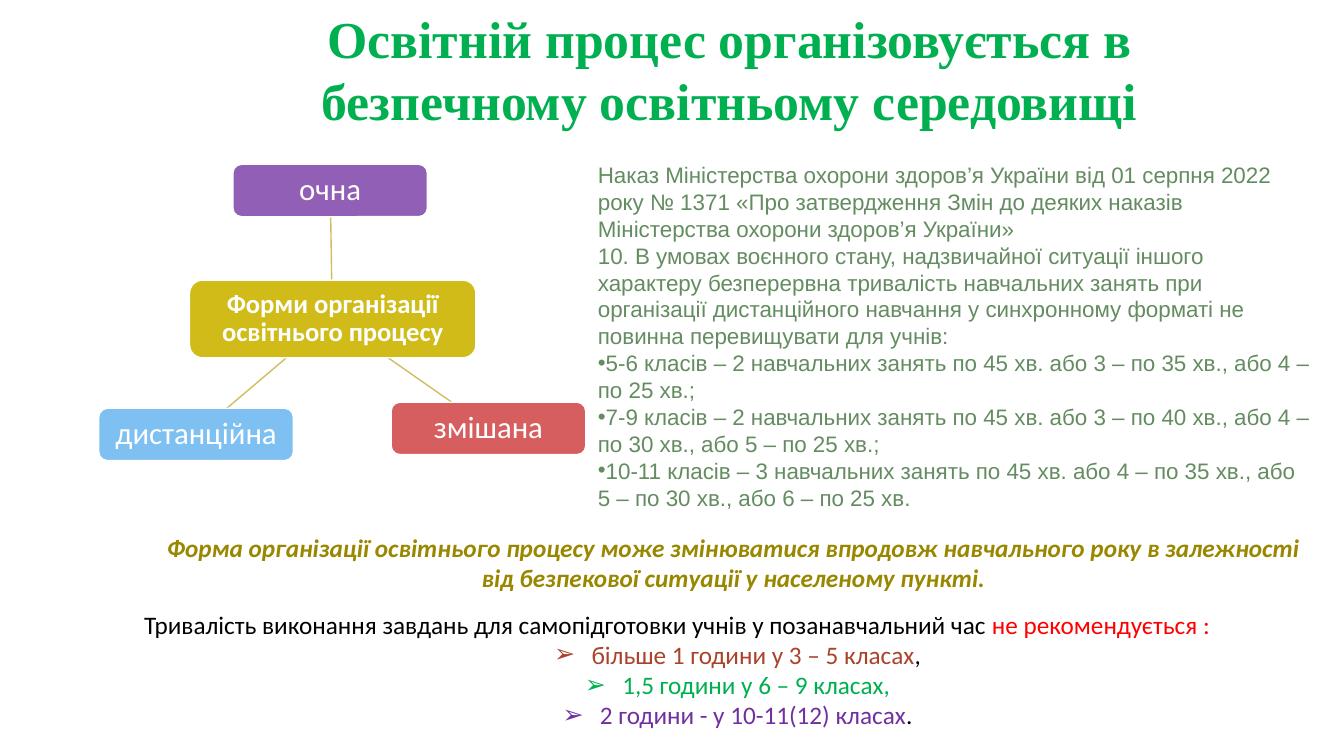
from dataclasses import dataclass

from lxml import etree
from pptx import Presentation
from pptx.dml.color import RGBColor
from pptx.enum.shapes import MSO_CONNECTOR, MSO_SHAPE
from pptx.enum.text import MSO_ANCHOR, MSO_AUTO_SIZE, PP_ALIGN
from pptx.oxml.ns import qn
from pptx.util import Inches, Pt

ROUNDED = MSO_SHAPE.ROUNDED_RECTANGLE
STRAIGHT = MSO_CONNECTOR.STRAIGHT
TOP, MIDDLE = MSO_ANCHOR.TOP, MSO_ANCHOR.MIDDLE
LEFT, CENTER = PP_ALIGN.LEFT, PP_ALIGN.CENTER
NO_FIT = MSO_AUTO_SIZE.NONE

WHITE, BLACK, RED, GREEN, PURPLE = "FFFFFF", "000000", "FF0000", "00B050", "7030A0"
BROWN, SAGE, OLIVE, SAND = "A9432B", "648C61", "998700", "D2BD5E"


@dataclass
class Line:
    runs: list[tuple[str, str]]
    align: int = LEFT
    bullet: str = ""
    indent: float = 0
    spacing: float = 1.0


@dataclass
class Block:
    left: float
    top: float
    width: float
    height: float
    lines: list[Line]
    font: dict
    side_margin: float = 0.13


@dataclass
class Node:
    left: float
    top: float
    width: float
    height: float
    text: str
    color: str
    opacity: int
    margin: float
    font: dict


@dataclass
class Link:
    start: tuple[float, float]
    end: tuple[float, float]


def rgb(color: str) -> RGBColor:
    return RGBColor.from_string(color)


def apply_format(target, values: dict) -> None:
    for name, value in values.items():
        setattr(target, name, value)


def set_bullet(paragraph, line: Line) -> None:
    properties = paragraph._p.get_or_add_pPr()
    properties.set("marL", str(Inches(line.indent)))
    properties.set("indent", str(-Inches(line.indent)))
    if line.bullet:
        etree.SubElement(properties, qn("a:buChar")).set("char", line.bullet)
    else:
        etree.SubElement(properties, qn("a:buNone"))


def write_lines(frame, lines: list[Line], font: dict) -> None:
    for index, line in enumerate(lines):
        paragraph = frame.add_paragraph() if index else frame.paragraphs[0]
        set_bullet(paragraph, line)
        apply_format(paragraph, {
            "alignment": line.align, "line_spacing": line.spacing,
            "space_before": Pt(0), "space_after": Pt(0),
        })
        for text, color in line.runs:
            run = paragraph.add_run()
            run.text = text
            apply_format(run.font, font)
            run.font.color.rgb = rgb(color)


def fill_block(shape, block: Block) -> None:
    apply_format(shape, {
        "left": Inches(block.left), "top": Inches(block.top),
        "width": Inches(block.width), "height": Inches(block.height),
    })
    side, edge = Inches(block.side_margin), Inches(0.07)
    apply_format(shape.text_frame, {
        "word_wrap": True, "auto_size": NO_FIT, "vertical_anchor": TOP,
        "margin_left": side, "margin_right": side,
        "margin_top": edge, "margin_bottom": edge,
    })
    write_lines(shape.text_frame, block.lines, block.font)


def draw_node(slide, node: Node) -> None:
    shape = slide.shapes.add_shape(
        ROUNDED, Inches(node.left), Inches(node.top), Inches(node.width), Inches(node.height))
    shape.shadow.inherit = False
    shape.fill.solid()
    shape.fill.fore_color.rgb = rgb(node.color)
    color_element = shape._element.spPr.find(qn("a:solidFill"))[0]
    etree.SubElement(color_element, qn("a:alpha")).set("val", str(node.opacity * 1000))
    shape.line.color.rgb = rgb(WHITE)
    shape.line.width = Pt(1)
    margin = Inches(node.margin)
    apply_format(shape.text_frame, {
        "word_wrap": True, "vertical_anchor": MIDDLE,
        "margin_left": margin, "margin_right": margin,
        "margin_top": margin, "margin_bottom": margin,
    })
    write_lines(shape.text_frame, [Line([(node.text, WHITE)], CENTER, spacing=0.9)], node.font)


def draw_link(slide, link: Link) -> None:
    points = [Inches(value) for value in (*link.start, *link.end)]
    connector = slide.shapes.add_connector(STRAIGHT, *points)
    connector.line.color.rgb = rgb(SAND)
    connector.line.width = Pt(1)
    etree.SubElement(connector._element.spPr, qn("a:effectLst"))


TITLE = Block(
    2.09, 0, 10.29, 1.39,
    [Line([("Освітній процес організовується в безпечному освітньому середовищі", GREEN)], CENTER)],
    {"name": "Times New Roman", "size": Pt(37), "bold": True})

ORDER_INTRO = [
    "Наказ Міністерства охорони здоров’я України від 01 серпня 2022 року № 1371 "
    "«Про затвердження Змін до деяких наказів Міністерства охорони здоров’я України»",
    "10. В умовах воєнного стану, надзвичайної ситуації іншого характеру безперервна "
    "тривалість навчальних занять при організації дистанційного навчання у синхронному "
    "форматі не повинна перевищувати для учнів:",
]
ORDER_LIMITS = [
    "5-6 класів – 2 навчальних занять по 45 хв. або 3 – по 35 хв., або 4 – по 25 хв.;",
    "7-9 класів – 2 навчальних занять по 45 хв. або 3 – по 40 хв., або 4 – по 30 хв., "
    "або 5 – по 25 хв.;",
    "10-11 класів – 3 навчальних занять по 45 хв. або 4 – по 35 хв., або 5 – по 30 хв., "
    "або 6 – по 25 хв.",
]
ORDER = Block(
    5.8, 1.53, 7.34, 3.64,
    [Line([(text, SAGE)]) for text in ORDER_INTRO]
    + [Line([(text, SAGE)], bullet="•") for text in ORDER_LIMITS],
    {"name": "Arial", "size": Pt(16)})

FORM_NOTE = Block(
    1.3, 5.21, 11.95, 0.76,
    [Line([("Форма організації освітнього процесу може змінюватися впродовж навчального року "
            "в залежності від безпекової ситуації у населеному пункті.", OLIVE)], CENTER)],
    {"name": "Calibri", "size": Pt(18), "bold": True, "italic": True}, side_margin=0.2)

HOMEWORK_LIMITS = [
    [("більше 1 години у 3 – 5 класах", BROWN), (",", BLACK)],
    [("1,5 години у 6 – 9 класах,", GREEN)],
    [("2 години - у 10-11(12) класах", PURPLE), (".", BLACK)],
]
HOMEWORK = Block(
    1.3, 5.97, 12.03, 1.39,
    [Line([("Тривалість виконання завдань для самопідготовки учнів у позанавчальний час ", BLACK),
           ("не рекомендується :", RED)])]
    + [Line(runs, CENTER, "➢", 0.37) for runs in HOMEWORK_LIMITS],
    {"name": "Calibri", "size": Pt(18)})

HUB = Node(1.88, 2.78, 2.84, 0.77, "Форми організації освітнього процесу", "CCB400", 90, 0.05,
           {"name": "Calibri", "size": Pt(19), "bold": True})
FORMS = [
    Node(left, top, 1.93, 0.52, text, color, opacity, 0.06, {"name": "Calibri", "size": Pt(22)})
    for left, top, text, color, opacity in [
        (2.31, 1.63, "очна", PURPLE, 77),
        (3.88, 3.99, "змішана", "C00000", 63),
        (0.98, 4.05, "дистанційна", "0083E6", 50),
    ]
]
LINKS = [
    Link((3.29, 2.78), (3.28, 2.15)),
    Link((3.85, 3.55), (4.48, 3.99)),
    Link((2.84, 3.55), (2.25, 4.05)),
]


def main() -> None:
    presentation = Presentation()
    presentation.slide_width = Inches(13.33)
    presentation.slide_height = Inches(7.5)
    slide = presentation.slides.add_slide(presentation.slide_layouts[3])
    for placeholder, block in zip(slide.placeholders, (TITLE, ORDER, HOMEWORK)):
        fill_block(placeholder, block)
    fill_block(slide.shapes.add_textbox(0, 0, 0, 0), FORM_NOTE)
    for link in LINKS:
        draw_link(slide, link)
    for node in (HUB, *FORMS):
        draw_node(slide, node)
    presentation.save("out.pptx")


if __name__ == "__main__":
    main()
